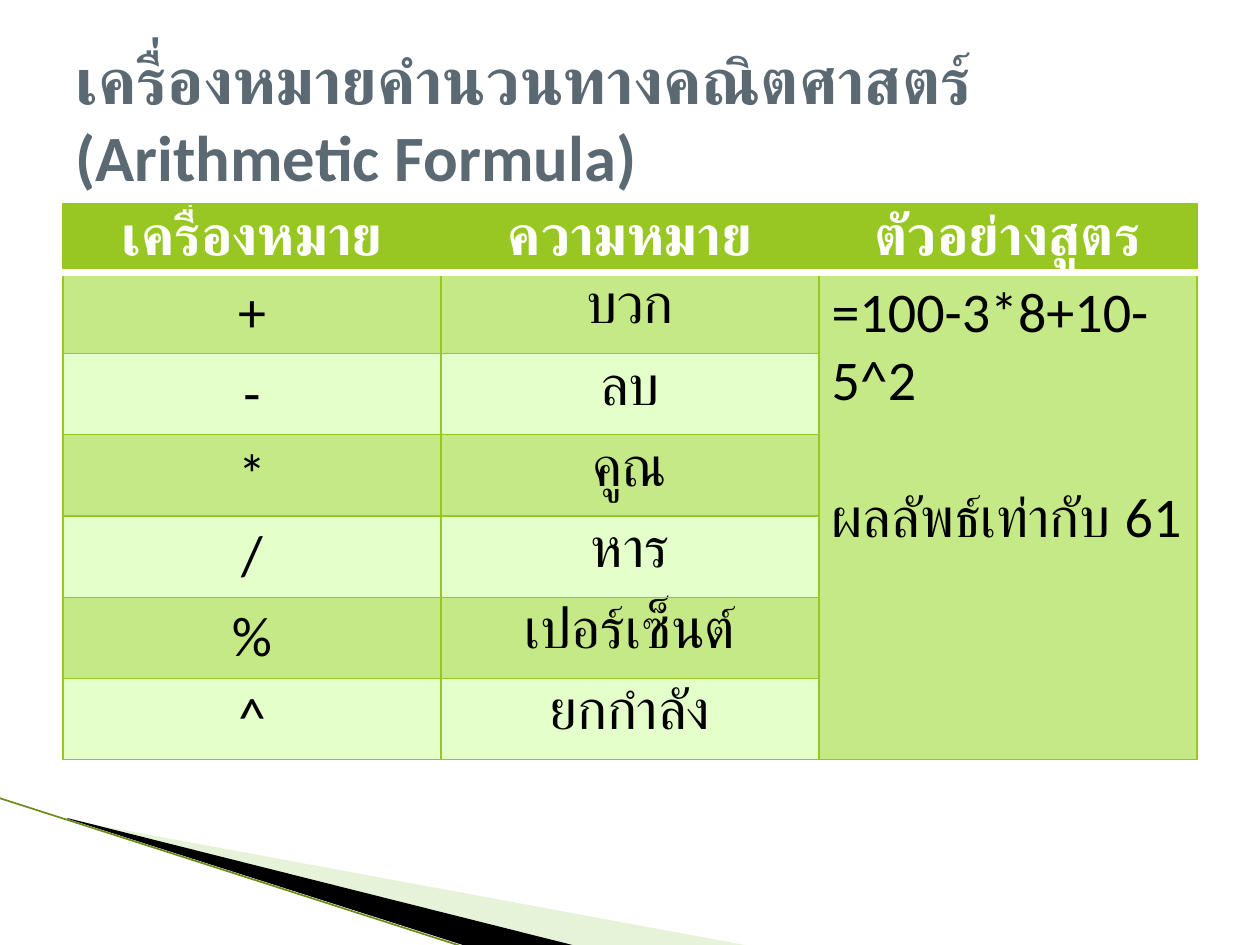
from typing import NamedTuple, Optional

from lxml.etree import SubElement
from pptx import Presentation
from pptx.dml.color import RGBColor
from pptx.enum.shapes import MSO_CONNECTOR as CONN
from pptx.enum.text import MSO_ANCHOR as ANCHOR, PP_ALIGN as ALIGN
from pptx.oxml.ns import qn
from pptx.util import Pt

EMU_PER_PX = 914400 / 126
FONT = "Calibri"
COLORS = {
    "title": "5B6973",
    "green": "98C723",
    "band": "C6E987",
    "pale": "E5FFCA",
    "leaf": "C5E19F",
    "edge": "6B8C1A",
    "white": "FFFFFF",
    "black": "000000",
}


class Wedge(NamedTuple):
    points: list[tuple[int, int]]
    color: str
    alpha: Optional[int] = None


WEDGES = [
    Wedge([(69, 820), (750, 946), (575, 946), (69, 819)], "leaf", 40),
    Wedge([(67, 818), (576, 946), (469, 947), (68, 819)], "black"),
]
HEADERS = ["เครื่องหมาย", "ความหมาย", "ตัวอย่างสูตร"]
OPERATORS = [
    ("+", "บวก"),
    ("-", "ลบ"),
    ("*", "คูณ"),
    ("/", "หาร"),
    ("%", "เปอร์เซ็นต์"),
    ("^", "ยกกำลัง"),
]
EXAMPLE = ["=100-3*8+10-5^2", "ผลลัพธ์เท่ากับ 61"]


def px(value: int) -> int:
    return round(value * EMU_PER_PX)


def rgb(name: str) -> RGBColor:
    return RGBColor.from_string(COLORS[name])


def style(p, size: float, color: str, bold: bool = False) -> None:
    p.font.name = FONT
    p.font.size = Pt(size)
    p.font.bold = bold
    p.font.color.rgb = rgb(color)


def draw_wedge(slide, wedge: Wedge) -> None:
    points = [(px(x), px(y)) for x, y in wedge.points]
    builder = slide.shapes.build_freeform(*points[0])
    builder.add_line_segments(points[1:], close=True)
    sp = builder.convert_to_shape()
    sp.shadow.inherit = False
    sp.line.fill.background()
    sp.fill.solid()
    sp.fill.fore_color.rgb = rgb(wedge.color)
    if wedge.alpha is not None:
        color = next(sp._element.spPr.iter(qn("a:srgbClr")))
        SubElement(color, qn("a:alpha"), val=str(wedge.alpha * 1000))


def draw_edge(slide) -> None:
    line = slide.shapes.add_connector(CONN.STRAIGHT, px(-1), px(798), px(467), px(948))
    line.line.color.rgb = rgb("edge")
    line.line.width = Pt(0.95)
    SubElement(line._element.spPr, qn("a:effectLst"))


def set_border(cell, side: str, color: str, width: float) -> None:
    tc_pr = cell._tc.get_or_add_tcPr()
    ln = SubElement(tc_pr, qn(f"a:ln{side}"), w=str(Pt(width)))
    fill = SubElement(ln, qn("a:solidFill"))
    SubElement(fill, qn("a:srgbClr"), val=COLORS[color])


def format_cell(cell, row: int) -> None:
    white_sides = {0: "B", 1: "T"}
    for side in "LRTB":
        if white_sides.get(row) == side:
            set_border(cell, side, "white", 4.33)
        else:
            set_border(cell, side, "green", 0.75)
    cell.fill.solid()
    cell.fill.fore_color.rgb = rgb("green" if row == 0 else "band" if row % 2 else "pale")


def write_cell(cell, text: str, header: bool) -> None:
    p = cell.text_frame.paragraphs[0]
    p.text = text
    p.alignment = ALIGN.CENTER
    style(p, 32, "white" if header else "black", header)


def draw_table(slide) -> None:
    rows = len(OPERATORS) + 1
    frame = slide.shapes.add_table(rows, 3, px(63), px(204), px(1134), px(554))
    table = frame.table
    for col in table.columns:
        col.width = px(378)
    for i, row in enumerate(table.rows):
        row.height = px(81 if i else 68)
        for cell in row.cells:
            format_cell(cell, i)
    for i, texts in enumerate([HEADERS, *OPERATORS]):
        for j, text in enumerate(texts):
            write_cell(table.cell(i, j), text, i == 0)

    example = table.cell(1, 2)
    example.merge(table.cell(rows - 1, 2))
    tf = example.text_frame
    tf.text = "\n".join(EXAMPLE)
    for p in tf.paragraphs:
        style(p, 32, "black")
    tf.paragraphs[1].space_before = Pt(39)


def draw_title(slide) -> None:
    tf = slide.shapes.add_textbox(px(63), px(38), px(1134), px(158)).text_frame
    tf.word_wrap = True
    tf.vertical_anchor = ANCHOR.MIDDLE
    p = tf.paragraphs[0]
    p.text = "เครื่องหมายคำนวนทางคณิตศาสตร์ (Arithmetic Formula)"
    style(p, 36.9, "title", True)


def main() -> None:
    prs = Presentation()
    prs.slide_width, prs.slide_height = px(1260), px(945)
    slide = prs.slides.add_slide(prs.slide_layouts[6])
    for wedge in WEDGES:
        draw_wedge(slide, wedge)
    draw_edge(slide)
    draw_table(slide)
    draw_title(slide)
    prs.save("out.pptx")


if __name__ == "__main__":
    main()
